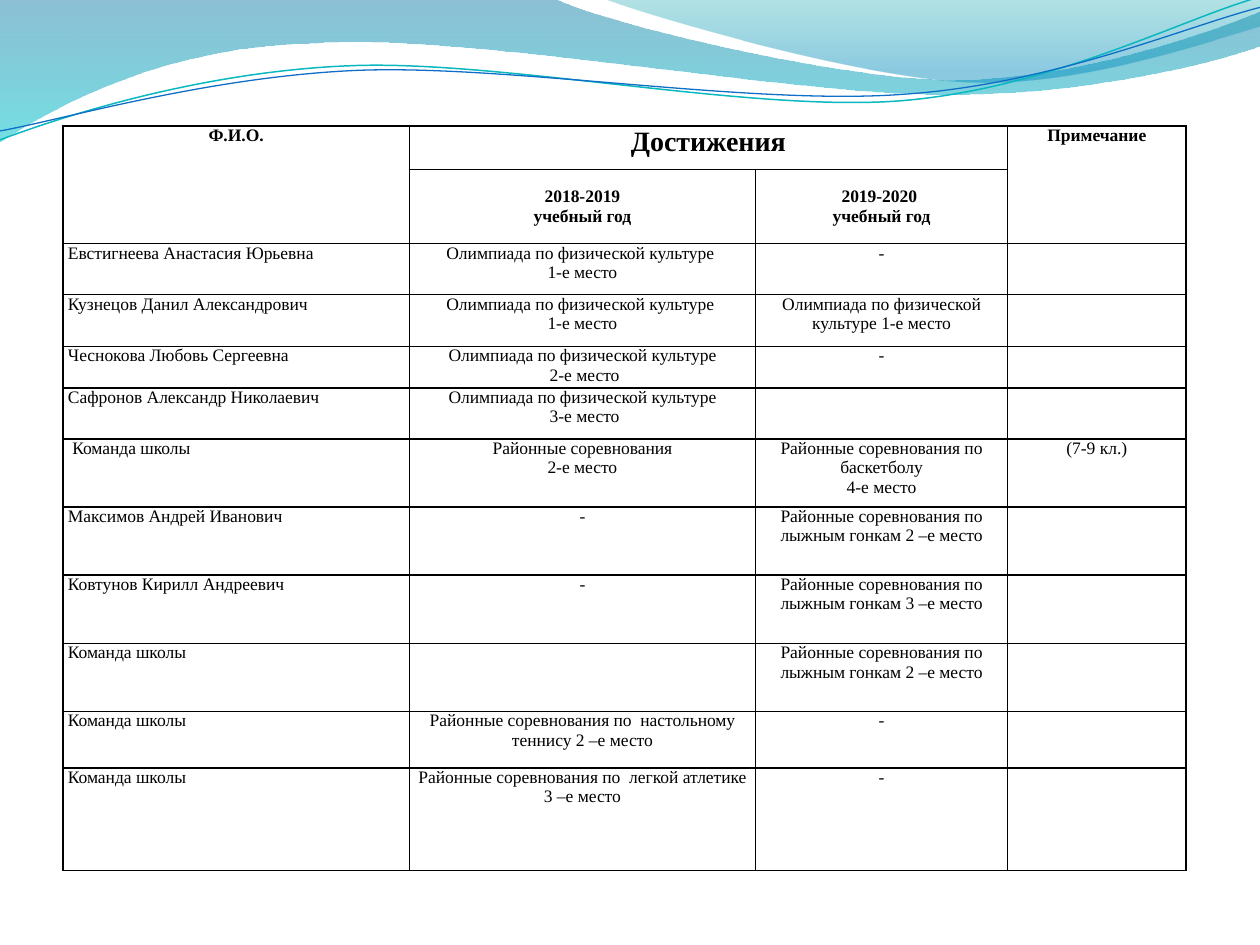
from itertools import product

from lxml.etree import SubElement
from pptx import Presentation
from pptx.dml.color import RGBColor
from pptx.enum.text import MSO_ANCHOR as Anchor, PP_ALIGN as Align
from pptx.oxml import parse_xml
from pptx.oxml.ns import nsdecls, qn
from pptx.util import Cm, Pt

BLACK = RGBColor(0x00, 0x00, 0x00)
DEEP_BLUE = RGBColor(0x00, 0x74, 0xA1)
TURQUOISE = RGBColor(0x00, 0xC6, 0xCF)
SEA_GREEN = RGBColor(0x00, 0xA1, 0xA9)
SKY_BLUE = RGBColor(0x00, 0x8B, 0xBF)
TEAL_LINE = RGBColor(0x0A, 0xB8, 0xBF)
BLUE_LINE = RGBColor(0x0F, 0x6F, 0xC6)

prs = Presentation()
prs.slide_width, prs.slide_height = Cm(25.4), Cm(19.05)
slide = prs.slides.add_slide(prs.slide_layouts[6])


def draw_wave(start, segments, closed):
    """Segments hold an end point, or two control points and an end point."""
    builder = slide.shapes.build_freeform(Cm(start[0]), Cm(start[1]))
    points = [(Cm(x), Cm(y)) for seg in segments for x, y in zip(seg[::2], seg[1::2])]
    builder.add_line_segments(points, close=closed)
    wave = builder.convert_to_shape()
    wave.shadow.inherit = False
    # Join each triple of points into one Bezier curve
    corners = iter(list(wave._element.spPr.iter(qn("a:lnTo"))))
    for segment in segments:
        corner = next(corners)
        if len(segment) == 6:
            corner.addprevious(curve := parse_xml(f'<a:cubicBezTo {nsdecls("a")}/>'))
            for part in (corner, next(corners), next(corners)):
                curve.append(part[0])
                part.getparent().remove(part)
    return wave


# Translucent gradient waves: start, segments, stops (position, colour, opacity %)
bands = [
    ((0, 0),
     [(11.18, -0.03), (12.09, 0.43, 16.87, 1.6, 19.25, 1.6),
      (21.67, 1.6, 24.33, 0.66, 25.4, 0.23), (25.43, 0.91),
      (24.97, 1.12, 22.1, 1.93, 18.95, 1.9), (15.8, 1.9, 9.7, 0.71, 6.53, 0.86),
      (3.28, 0.91, 1.17, 2.11, -0.03, 2.87), (0, 0)],
     [(0, DEEP_BLUE, 45), (1, TURQUOISE, 55)]),
    ((12.17, -0.03),
     [(12.93, 0.28, 17.32, 1.57, 19.53, 1.65),
      (21.74, 1.75, 24.41, 0.81, 25.4, 0.53), (25.4, 0), (12.17, -0.03)],
     [(0, SEA_GREEN, 30), (0.8, SKY_BLUE, 45)]),
]
for start, segments, stops in bands:
    band = draw_wave(start, segments, True)
    band.line.fill.background()
    band.fill.gradient()
    band.fill.gradient_angle = 270
    for stop, (position, colour, _) in zip(band.fill.gradient_stops, stops):
        stop.position = position
        stop.color.rgb = colour
    for colour_el, (_, _, opacity) in zip(band._element.spPr.iter(qn("a:srgbClr")), stops):
        SubElement(colour_el, qn("a:alpha"), val=str(opacity * 1000))

# Thin wave lines, tilted slightly
strands = [
    ((-0.05, 2.22),
     [(1.19, 1.82, 4.02, 1.04, 7.05, 1.06), (10.05, 1.07, 15.02, 2.37, 18.08, 2.29),
      (21.13, 2.2, 23.86, 0.91, 25.41, 0.55)], TEAL_LINE, 0.85),
    ((-0.04, 2.04),
     [(1.16, 1.89, 4.17, 1.15, 7.2, 1.16), (10.25, 1.18, 15.13, 2.25, 18.19, 2.16),
      (21.22, 2.1, 23.93, 1.06, 25.45, 0.75)], BLUE_LINE, 0.75),
]
for start, segments, colour, width in strands:
    strand = draw_wave(start, segments, False)
    strand.rotation = 357.3
    strand.fill.background()
    strand.line.color.rgb = colour
    strand.line.width = Pt(width)

# Achievements table
OLYMPIAD = "Олимпиада по физической культуре"
DISTRICT = "Районные соревнования"
SKIING = f"{DISTRICT} по лыжным гонкам"
TEAM = "Команда школы"
rows = [
    ("Ф.И.О.", "Достижения", "", "Примечание"),
    ("", "2018-2019\nучебный год", "2019-2020 \nучебный год", ""),
    ("Евстигнеева Анастасия Юрьевна", f"{OLYMPIAD} \n1-е место", "-", ""),
    ("Кузнецов Данил Александрович", f"{OLYMPIAD} \n1-е место", f"{OLYMPIAD} 1-е место", ""),
    ("Чеснокова Любовь Сергеевна", f"{OLYMPIAD}\n 2-е место", "-", ""),
    ("Сафронов Александр Николаевич", f"{OLYMPIAD}\n 3-е место", "", ""),
    (f" {TEAM}", f"{DISTRICT}\n2-е место", f"{DISTRICT} по баскетболу\n4-е место", "(7-9 кл.)"),
    ("Максимов Андрей Иванович", "-", f"{SKIING} 2 –е место", ""),
    ("Ковтунов Кирилл Андреевич", "-", f"{SKIING} 3 –е место", ""),
    (TEAM, "", f"{SKIING} 2 –е место", ""),
    (TEAM, f"{DISTRICT} по  настольному теннису 2 –е место", "-", ""),
    (TEAM, f"{DISTRICT} по  легкой атлетике 3 –е место", "-", ""),
]
col_widths = [6.98, 6.98, 5.08, 3.6]
row_heights = [0.88, 1.49, 1.03, 1.04, 0.84, 1.03, 1.37, 1.37, 1.38, 1.37, 1.14, 2.07]
achievements = slide.shapes.add_table(
    len(rows), len(col_widths), Cm(1.27), Cm(2.54),
    Cm(sum(col_widths)), Cm(sum(row_heights))).table
achievements.first_row = achievements.horz_banding = False
for column, width in zip(achievements.columns, col_widths):
    column.width = Cm(width)
for row, height in zip(achievements.rows, row_heights):
    row.height = Cm(height)

cell_format = {"margin_left": Cm(0.1), "margin_right": Cm(0.1),
               "margin_top": 0, "margin_bottom": 0}
font_format = {"name": "Times New Roman", "size": Pt(10)}
for r, c in product(range(len(rows)), range(len(col_widths))):
    cell = achievements.cell(r, c)
    cell.text = rows[r][c]
    for attr, value in cell_format.items():
        setattr(cell, attr, value)
    cell.vertical_anchor = Anchor.MIDDLE if r == 1 else Anchor.TOP
    cell.fill.background()
    for i, side in enumerate(("lnL", "lnR", "lnT", "lnB")):
        cell._tc.tcPr.insert(i, parse_xml(
            f'<a:{side} {nsdecls("a")} w="12700"><a:solidFill>'
            f'<a:srgbClr val="{BLACK}"/></a:solidFill></a:{side}>'))
    for paragraph in cell.text_frame.paragraphs:
        paragraph.alignment = Align.LEFT if c == 0 and r > 1 else Align.CENTER
        for run in paragraph.runs:
            for attr, value in font_format.items():
                setattr(run.font, attr, value)
            run.font.bold = r < 2
            run.font.color.rgb = BLACK

# Header spans and the larger heading
for top, left, bottom, right in [(0, 0, 1, 0), (0, 1, 0, 2), (0, 3, 1, 3)]:
    achievements.cell(top, left).merge(achievements.cell(bottom, right))
achievements.cell(0, 1).text_frame.paragraphs[0].runs[0].font.size = Pt(16)

prs.save("out.pptx")
